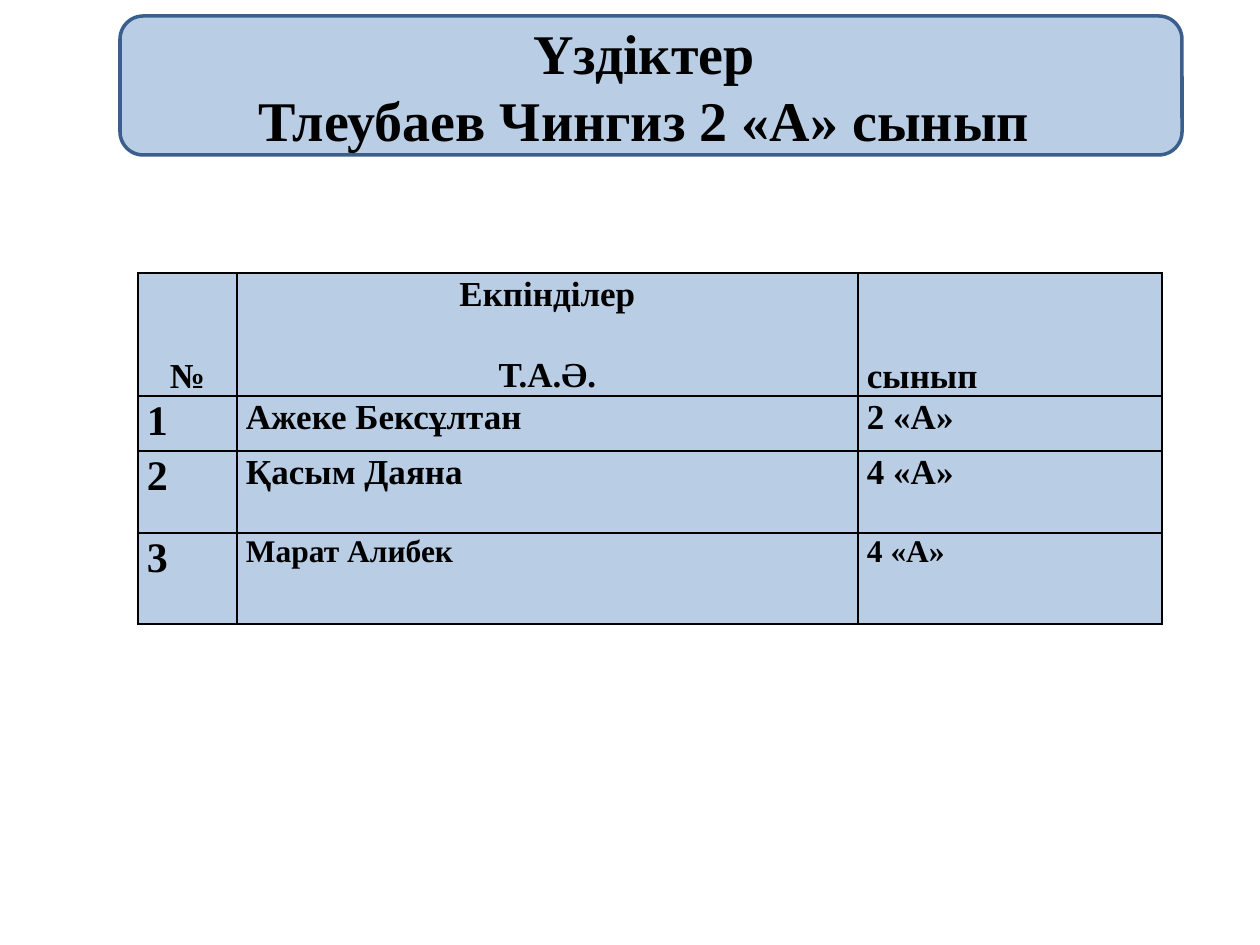
from lxml.etree import SubElement
from pptx import Presentation
from pptx.dml.color import RGBColor
from pptx.enum.shapes import MSO_SHAPE
from pptx.enum.text import MSO_ANCHOR, PP_ALIGN
from pptx.oxml.ns import qn
from pptx.util import Pt

EMU_PER_PX = 914400 / 126


def px(length):
    return round(length * EMU_PER_PX)


def color(hex_string):
    return RGBColor.from_string(hex_string)


class SlideBuilder:
    FONT = "Times New Roman"
    TEXT = "000000"
    PANEL = "B9CDE5"
    OUTLINE = "3A5F8C"
    BORDER = "000000"

    def __init__(self, slide):
        self.slide = slide

    def add_lines(self, text_frame, lines, size, align, spacing=None, gap=0):
        """One bold paragraph per line, with a gap in points between them."""
        for index, line in enumerate(lines):
            paragraph = text_frame.paragraphs[0] if index == 0 else text_frame.add_paragraph()
            paragraph.alignment = align
            if spacing:
                paragraph.line_spacing = spacing
            if index and gap:
                paragraph.space_before = Pt(gap)
            run = paragraph.add_run()
            run.text = line
            run.font.name = self.FONT
            run.font.size = Pt(size)
            run.font.bold = True
            run.font.color.rgb = color(self.TEXT)

    def banner(self, left, top, width, height, lines):
        shape = self.slide.shapes.add_shape(
            MSO_SHAPE.ROUNDED_RECTANGLE, px(left), px(top), px(width), px(height))
        shape.shadow.inherit = False
        shape.fill.solid()
        shape.fill.fore_color.rgb = color(self.PANEL)
        shape.line.color.rgb = color(self.OUTLINE)
        shape.line.width = Pt(2)
        shape.text_frame.word_wrap = True
        shape.text_frame.vertical_anchor = MSO_ANCHOR.MIDDLE
        self.add_lines(shape.text_frame, lines, 32, PP_ALIGN.CENTER)

    def table(self, left, top, columns, rows):
        table = self.slide.shapes.add_table(
            len(rows), len(columns), px(left), px(top), px(sum(columns)), px(sum(rows))).table
        for column, width in zip(table.columns, columns):
            column.width = px(width)
        for row, height in zip(table.rows, rows):
            row.height = px(height)
        return table

    def cell(self, cell, lines, size, align=PP_ALIGN.LEFT, anchor=MSO_ANCHOR.TOP, gap=0):
        cell.margin_left = cell.margin_right = px(9)
        cell.margin_top = cell.margin_bottom = 0
        cell.vertical_anchor = anchor
        self.borders(cell)
        cell.fill.solid()
        cell.fill.fore_color.rgb = color(self.PANEL)
        self.add_lines(cell.text_frame, lines, size, align, spacing=1.05, gap=gap)

    def borders(self, cell):
        properties = cell._tc.get_or_add_tcPr()
        for side in ("a:lnL", "a:lnR", "a:lnT", "a:lnB"):
            line = SubElement(properties, qn(side), w=str(Pt(1)))
            fill = SubElement(line, qn("a:solidFill"))
            SubElement(fill, qn("a:srgbClr"), val=self.BORDER)


def main():
    presentation = Presentation()
    presentation.slide_width = px(1260)
    presentation.slide_height = px(945)
    builder = SlideBuilder(presentation.slides.add_slide(presentation.slide_layouts[6]))

    # Heading
    builder.banner(120, 16, 1062, 139, ["Үздіктер ", "Тлеубаев Чингиз 2 «А» сынып "])

    # Table header
    table = builder.table(138, 273, [99, 621, 304], [123, 55, 82, 91])
    builder.cell(table.cell(0, 0), ["№"], 20, PP_ALIGN.CENTER, MSO_ANCHOR.BOTTOM)
    builder.cell(table.cell(0, 1), ["Екпінділер", "Т.А.Ә."], 20, PP_ALIGN.CENTER, gap=23)
    builder.cell(table.cell(0, 2), ["сынып"], 20, anchor=MSO_ANCHOR.BOTTOM)

    # Pupils: name, class, text size
    pupils = [
        ("Ажеке Бексұлтан", "2 «А»", 20),
        ("Қасым Даяна", "4 «А»", 20),
        ("Марат Алибек", "4 «А»", 18),
    ]
    for number, (name, grade, size) in enumerate(pupils, start=1):
        builder.cell(table.cell(number, 0), [str(number)], 24)
        builder.cell(table.cell(number, 1), [name], size)
        builder.cell(table.cell(number, 2), [grade], size)

    presentation.save("out.pptx")


if __name__ == "__main__":
    main()
